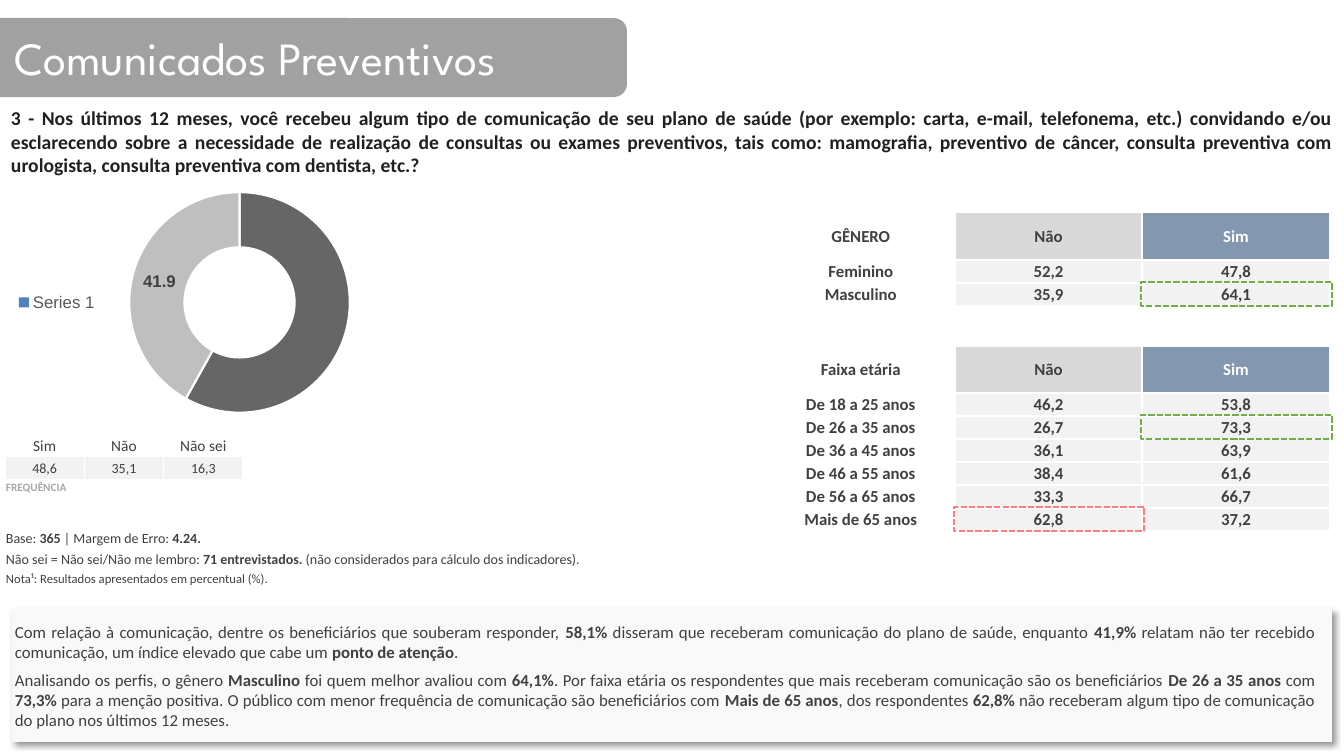
import pptx
import pptx.util
import pptx.chart.data
import pptx.dml.color
import pptx.enum.chart
import pptx.enum.dml
import pptx.enum.shapes
import pptx.enum.text
import pptx.oxml

SCALE = 914400 / 100.8
NS = 'xmlns:a="http://schemas.openxmlformats.org/drawingml/2006/main"'
ALIGN = pptx.enum.text.PP_ALIGN
ANCHOR = pptx.enum.text.MSO_ANCHOR
SHAPE = pptx.enum.shapes.MSO_SHAPE
FONT, INK, PALE = "Calibri", "404040", "F2F2F2"

TITLE = "Comunicados Preventivos"
ASK = (
    "3 - Nos últimos 12 meses, você recebeu algum tipo de comunicação de seu plano de saúde "
    "(por exemplo: carta, e-mail, telefonema, etc.) convidando e/ou esclarecendo sobre a "
    "necessidade de realização de consultas ou exames preventivos, tais como: mamografia, "
    "preventivo de câncer, consulta preventiva com urologista, consulta preventiva com dentista, etc.?"
)
NOTES = [
    ("Base: *365* | Margem de Erro: *4.24.*", 10),
    ("Não sei = Não sei/Não me lembro: *71 entrevistados.* "
     "(não considerados para cálculo dos indicadores).", 10),
    ("Nota¹: Resultados apresentados em percentual (%).", 9),
]
REMARKS = [
    "Com relação à comunicação, dentre os beneficiários que souberam responder, *58,1%* disseram "
    "que receberam comunicação do plano de saúde, enquanto *41,9%* relatam não ter recebido "
    "comunicação, um índice elevado que cabe um *ponto de atenção*.",
    "Analisando os perfis, o gênero *Masculino *foi quem melhor avaliou com *64,1%*. Por faixa "
    "etária os respondentes que mais receberam comunicação são os beneficiários *De 26 a 35 anos* "
    "com *73,3% *para a menção positiva. O público com menor frequência de comunicação são "
    "beneficiários com *Mais de 65 anos*, dos respondentes *62,8% *não receberam algum tipo de "
    "comunicação do plano nos últimos 12 meses.",
]
SEX = [("GÊNERO", "Não", "Sim"), ("Feminino", "52,2", "47,8"), ("Masculino", "35,9", "64,1")]
AGE = [
    ("Faixa etária", "Não", "Sim"),
    ("De 18 a 25 anos", "46,2", "53,8"),
    ("De 26 a 35 anos", "26,7", "73,3"),
    ("De 36 a 45 anos", "36,1", "63,9"),
    ("De 46 a 55 anos", "38,4", "61,6"),
    ("De 56 a 65 anos", "33,3", "66,7"),
    ("Mais de 65 anos", "62,8", "37,2"),
]


def px(n):
    return pptx.util.Emu(round(n * SCALE))


def tint(code):
    return pptx.dml.color.RGBColor.from_string(code)


def style(font, size, color, bold=False, face=FONT):
    font.size = pptx.util.Pt(size)
    font.name = face
    font.bold = bold
    font.color.rgb = tint(color)


def write(para, text, size, color=INK, bold=False, align=ALIGN.LEFT, face=FONT):
    para.alignment = align
    for i, part in enumerate(text.split("*")):
        if part:
            run = para.add_run()
            run.text = part
            style(run.font, size, color, bold or i % 2 == 1, face)


def pad(item, left, top, right, bottom):
    item.margin_left, item.margin_top = px(left), px(top)
    item.margin_right, item.margin_bottom = px(right), px(bottom)


def block(slide, kind, box, fill=None):
    shape = slide.shapes.add_shape(kind, *map(px, box))
    shape.shadow.inherit = False
    shape.line.fill.background()
    if fill:
        shape.fill.solid()
        shape.fill.fore_color.rgb = tint(fill)
    else:
        shape.fill.background()
    return shape


def head(slide, box):
    x, y, w, h = box
    title = slide.shapes.title
    band = block(slide, SHAPE.ROUNDED_RECTANGLE, (x - 27, y, w + 27, h), "A1A1A1")
    title.element.addprevious(band.element)
    title.left, title.top, title.width, title.height = map(px, (x + 4, y, w - 8, h))
    frame = title.text_frame
    frame.auto_size = pptx.enum.text.MSO_AUTO_SIZE.NONE
    frame.vertical_anchor = ANCHOR.MIDDLE
    write(frame.paragraphs[0], TITLE, 33, "FFFFFF", face="League Spartan")


def ask(slide, box):
    frame = slide.shapes.add_textbox(*map(px, box)).text_frame
    frame.word_wrap = True
    pad(frame, 11, 6, 11, 6)
    write(frame.paragraphs[0], ASK, 14, "202020", True, ALIGN.JUSTIFY)


def donut(slide, box):
    data = pptx.chart.data.CategoryChartData(number_format="0.0")
    data.categories = ["Sim", "Não"]
    data.add_series("Series 1", (58.1, 41.9))
    kind = pptx.enum.chart.XL_CHART_TYPE.DOUGHNUT
    chart = slide.shapes.add_chart(kind, *map(px, box), data).chart
    style(chart.font, 10, "000000", face="Arial")
    chart.has_title = False
    chart.has_legend = True
    chart.legend.position = pptx.enum.chart.XL_LEGEND_POSITION.LEFT
    chart.legend.include_in_layout = False
    style(chart.legend.font, 12, "595959", face="Arial")
    plot = chart.plots[0]
    plot.vary_by_categories = False
    plot.has_data_labels = True
    labels = plot.data_labels
    labels.show_value = True
    labels.show_percentage = False
    labels.number_format = "0.0"
    labels.number_format_is_linked = False
    style(labels.font, 12, "FFFFFF", True, "Arial")
    points = plot.series[0].points
    for i, color in enumerate(("666666", "BFBFBF")):
        form = points[i].format
        form.fill.solid()
        form.fill.fore_color.rgb = tint(color)
        form.line.color.rgb = tint("FFFFFF")
        form.line.width = pptx.util.Pt(1.5)
    style(points[1].data_label.font, 12, INK, True, "Arial")
    area = chart.element.chart.plotArea
    for old in area.xpath("c:layout"):
        area.remove(old)
    spots = "".join(f'<c:{k} val="{v}"/>' for k, v in zip("xywh", (0.31, 0.06, 0.55, 0.88)))
    area.insert(0, pptx.oxml.parse_xml(
        '<c:layout xmlns:c="http://schemas.openxmlformats.org/drawingml/2006/chart">'
        '<c:manualLayout><c:layoutTarget val="inner"/><c:xMode val="edge"/>'
        f'<c:yMode val="edge"/>{spots}</c:manualLayout></c:layout>'))


def grid(slide, x, y, w, rows, cols, edge):
    table = slide.shapes.add_table(len(rows), cols, px(x), px(y), px(w), px(sum(rows))).table
    table.first_row = table.horz_banding = False
    for row, h in zip(table.rows, rows):
        row.height = px(h)
    for cell in table.iter_cells():
        pad(cell, 1, 1, 1, 0)
        props = cell._tc.get_or_add_tcPr()
        for side in ("lnL", "lnR", "lnT", "lnB"):
            props.append(pptx.oxml.parse_xml(
                f'<a:{side} {NS} w="{round(edge * 12700)}"><a:solidFill>'
                f'<a:srgbClr val="FFFFFF"/></a:solidFill></a:{side}>'))
        cell.fill.background()
    return table


def put(cell, text, size, fill=None, color=INK, bold=False, anchor=ANCHOR.MIDDLE):
    cell.vertical_anchor = anchor
    write(cell.text_frame.paragraphs[0], text, size, color, bold, ALIGN.CENTER)
    if fill:
        cell.fill.solid()
        cell.fill.fore_color.rgb = tint(fill)


def stats(slide, x, y, w):
    table = grid(slide, x, y, w, (20, 24, 24), 3, 1)
    for c, (name, value) in enumerate((("Sim", "48,6"), ("Não", "35,1"), ("Não sei", "16,3"))):
        put(table.cell(0, c), name, 11, anchor=ANCHOR.BOTTOM)
        put(table.cell(1, c), value, 10, PALE)
    table.cell(2, 0).merge(table.cell(2, 2))
    write(table.cell(2, 0).text_frame.paragraphs[0], "FREQUÊNCIA", 8, "A6A6A6", True)


def notes(slide, x, y, w):
    table = grid(slide, x, y, w, [21] * len(NOTES), 1, 1)
    for r, (text, size) in enumerate(NOTES):
        write(table.cell(r, 0).text_frame.paragraphs[0], text, size)


def mark(slide, box, color):
    line = block(slide, SHAPE.RECTANGLE, box).line
    line.color.rgb = tint(color)
    line.width = pptx.util.Pt(1.5)
    line.dash_style = pptx.enum.dml.MSO_LINE.SQUARE_DOT


def profile(slide, x, y, w):
    rows = [48, 23, 23, 40, 47] + [23] * 6
    table = grid(slide, x, y, w, rows, 3, 1.5)
    table.cell(3, 0).merge(table.cell(3, 2))
    for start, part in ((0, SEX), (4, AGE)):
        for r, line in enumerate(part):
            fills = (None, PALE, PALE) if r else (None, "D9D9D9", "8497B0")
            for c, text in enumerate(line):
                color = "FFFFFF" if r == 0 and c == 2 else INK
                put(table.cell(start + r, c), text, 12, fills[c], color, True)
    for r, c, color in ((2, 2, "70AD47"), (6, 2, "70AD47"), (10, 1, "FF7C80")):
        top = y + sum(rows[:r])
        mark(slide, (x + c * w / 3 - 1, top - 1, w / 3 + 3, rows[r] + 1), color)


def remarks(slide, box):
    x, y, w, h = box
    card = block(slide, SHAPE.RECTANGLE, box, "F9F9F9")
    glow = card.element.spPr.find(pptx.oxml.ns.qn("a:effectLst"))
    glow.append(pptx.oxml.parse_xml(
        f'<a:outerShdw {NS} blurRad="50800" dist="38100" dir="2700000" algn="tl" rotWithShape="0">'
        '<a:srgbClr val="000000"><a:alpha val="40000"/></a:srgbClr></a:outerShdw>'))
    frame = slide.shapes.add_textbox(px(x - 7), px(y + 9), px(w), px(h - 15)).text_frame
    frame.word_wrap = True
    for i, text in enumerate(REMARKS):
        para = frame.add_paragraph() if i else frame.paragraphs[0]
        if i:
            para.space_before = pptx.util.Pt(5)
        write(para, text, 12, align=ALIGN.JUSTIFY)


def main():
    deck = pptx.Presentation()
    deck.slide_width, deck.slide_height = px(1344), px(756)
    slide = deck.slides.add_slide(deck.slide_layouts[5])
    head(slide, (0, 18, 627, 79))
    ask(slide, (0, 100, 1344, 83))
    donut(slide, (5, 177, 401, 251))
    stats(slide, 5, 436, 238)
    notes(slide, 5, 529, 659)
    profile(slide, 767, 212, 563)
    remarks(slide, (12, 608, 1320, 134))
    deck.save("out.pptx")


if __name__ == "__main__":
    main()
